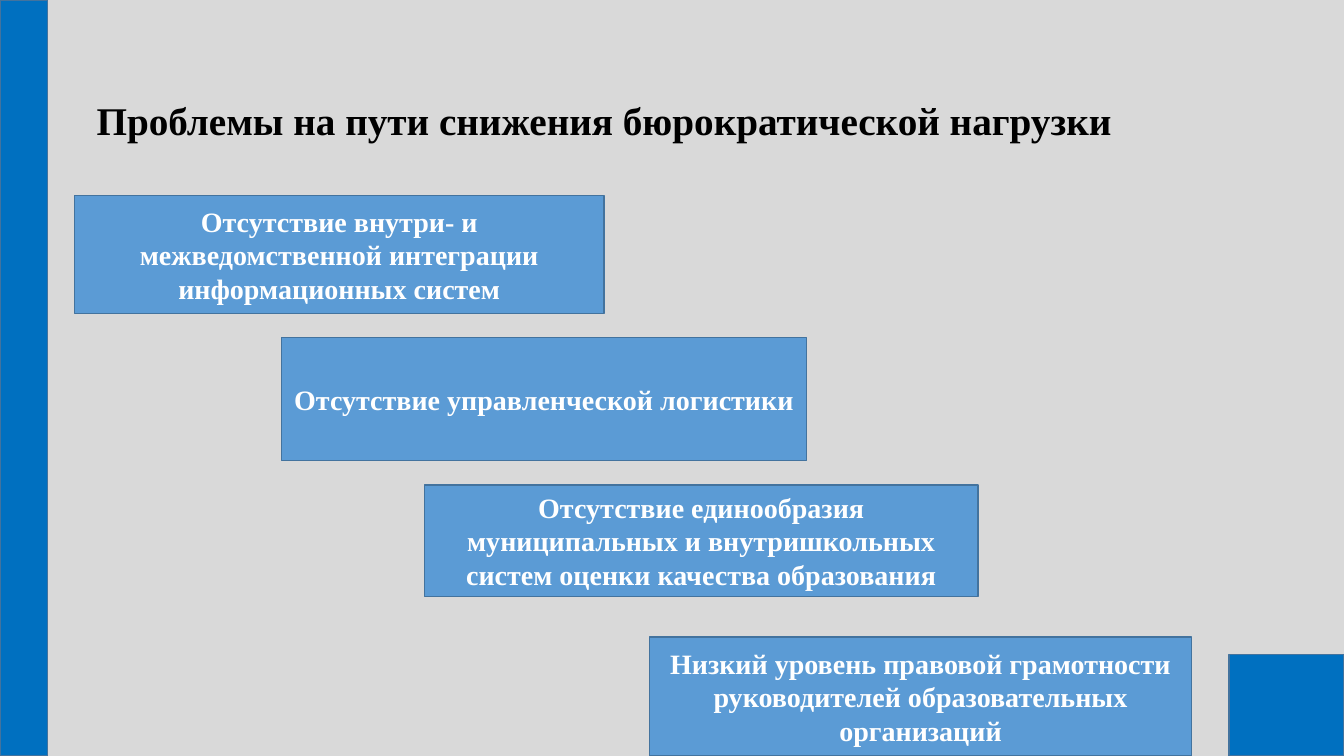
"""Build the slide on obstacles to reducing the bureaucratic load."""
from dataclasses import dataclass

from pptx import Presentation
from pptx.dml.color import RGBColor
from pptx.enum.shapes import MSO_SHAPE
from pptx.enum.text import MSO_ANCHOR, PP_ALIGN
from pptx.slide import Slide
from pptx.text.text import TextFrame
from pptx.util import Inches, Pt

BACKGROUND = RGBColor(0xD9, 0xD9, 0xD9)
ACCENT = RGBColor(0x00, 0x70, 0xC0)
BOX_FILL = RGBColor(0x5B, 0x9B, 0xD5)
OUTLINE = RGBColor(0x43, 0x73, 0x9E)
WHITE = RGBColor(0xFF, 0xFF, 0xFF)
BLACK = RGBColor(0x00, 0x00, 0x00)
FONT = "Times New Roman"
TITLE = "Проблемы на пути снижения бюрократической нагрузки"


@dataclass(frozen=True)
class Block:
    left: float
    top: float
    width: float
    height: float
    fill: RGBColor
    text: str = ""


BLOCKS = [
    Block(12.19, 6.49, 1.14, 1.01, ACCENT),
    Block(0, 0, 0.47, 7.5, ACCENT),
    Block(2.79, 3.35, 5.21, 1.22, BOX_FILL, "Отсутствие управленческой логистики"),
    Block(0.74, 1.94, 5.25, 1.17, BOX_FILL,
          "Отсутствие внутри- и межведомственной интеграции информационных систем"),
    Block(4.21, 4.81, 5.49, 1.11, BOX_FILL,
          "Отсутствие единообразия муниципальных и внутришкольных систем оценки качества образования"),
    Block(6.44, 6.32, 5.38, 1.18, BOX_FILL,
          "Низкий уровень правовой грамотности руководителей образовательных организаций"),
]


def write_text(frame: TextFrame, text: str, size: int, color: RGBColor, align: PP_ALIGN) -> None:
    frame.text = text
    frame.word_wrap = True
    frame.vertical_anchor = MSO_ANCHOR.MIDDLE
    para = frame.paragraphs[0]
    para.alignment = align
    font = para.runs[0].font
    font.name = FONT
    font.size = Pt(size)
    font.bold = True
    font.color.rgb = color


def draw_block(page: Slide, block: Block) -> None:
    box = page.shapes.add_shape(MSO_SHAPE.RECTANGLE, Inches(block.left), Inches(block.top),
                                Inches(block.width), Inches(block.height))
    box.shadow.inherit = False
    box.fill.solid()
    box.fill.fore_color.rgb = block.fill
    box.line.color.rgb = OUTLINE
    box.line.width = Pt(1)
    if block.text:
        write_text(box.text_frame, block.text, 20, WHITE, PP_ALIGN.CENTER)


def draw_title(page: Slide) -> None:
    box = page.shapes.add_textbox(Inches(0.86), Inches(0.58), Inches(10.64), Inches(1.27))
    write_text(box.text_frame, TITLE, 28, BLACK, PP_ALIGN.LEFT)
    box.text_frame.paragraphs[0].line_spacing = 0.9


def main() -> None:
    deck = Presentation()
    deck.slide_width = Inches(13.33)
    deck.slide_height = Inches(7.5)
    page = deck.slides.add_slide(deck.slide_layouts[6])
    page.background.fill.solid()
    page.background.fill.fore_color.rgb = BACKGROUND
    draw_title(page)
    for block in BLOCKS:
        draw_block(page, block)
    deck.save("out.pptx")


if __name__ == "__main__":
    main()
